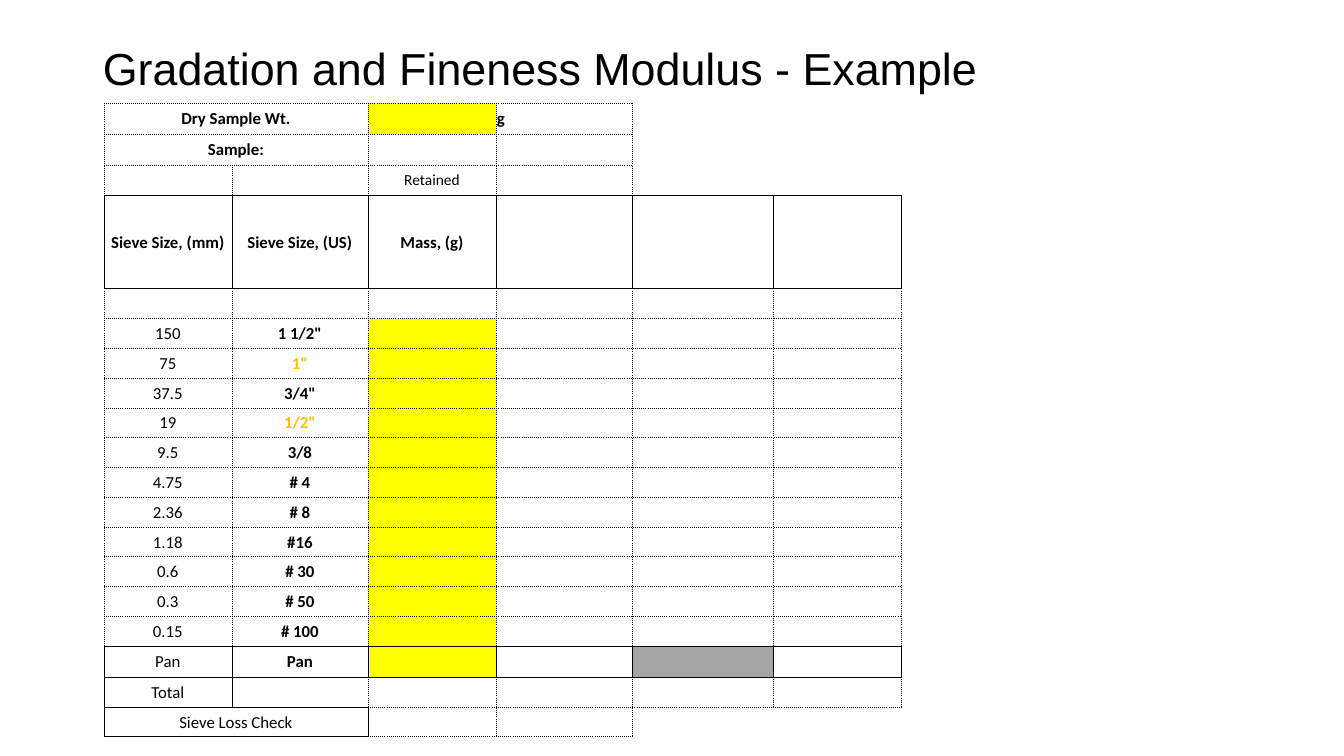
"""Build the gradation and fineness modulus example slide."""
from lxml.etree import SubElement
from pptx import Presentation
from pptx.dml.color import RGBColor
from pptx.enum.text import MSO_ANCHOR, PP_ALIGN
from pptx.oxml.ns import qn
from pptx.util import Inches, Pt

TITLE = "Gradation and Fineness Modulus - Example"
HEAD_ROWS = [
    ["Dry Sample Wt.", "", "", "g"],
    ["Sample:"],
    ["", "", "Retained"],
    ["Sieve Size, (mm)", "Sieve Size, (US)", "Mass, (g)"],
    [],
]
SIEVES = [
    ("150", '1 1/2"'), ("75", '1"'), ("37.5", '3/4"'), ("19", '1/2"'),
    ("9.5", "3/8"), ("4.75", "# 4"), ("2.36", "# 8"), ("1.18", "#16"),
    ("0.6", "# 30"), ("0.3", "# 50"), ("0.15", "# 100"), ("Pan", "Pan"),
]
ROWS = HEAD_ROWS + SIEVES + [["Total"], ["Sieve Loss Check"]]
COL_WIDTHS = [1.27, 1.35, 1.27, 1.35, 1.4, 1.27]
TABLE_HEIGHT = 6.29
SPECIAL_HEIGHTS = {0: 0.31, 1: 0.31, 3: 0.93, 16: 0.31}
RETAINED, HEADER, FIRST_SIEVE, PAN, TOTAL, LOSS = 2, 3, 5, 16, 17, 18
MERGED_ROWS = (0, 1, LOSS)
HALF_SIEVES = ('1"', '1/2"')
BLACK, ORANGE, YELLOW, GRAY = "000000", "FFC000", "FFFF00", "A5A5A5"


def color(hex_string):
    return RGBColor.from_string(hex_string)


def set_font(font, **values):
    font.color.rgb = color(values.pop("color", BLACK))
    for name, value in values.items():
        setattr(font, name, value)


def in_grid(row, col):
    columns = 6 if HEADER <= row <= TOTAL else 4
    return 0 <= row <= LOSS and 0 <= col < columns


def is_boxed(row, col):
    return in_grid(row, col) and (
        row in (HEADER, PAN) or (row, col) in ((TOTAL, 0), (LOSS, 0), (LOSS, 1)))


def draw_borders(cell, row, col):
    joined = row in MERGED_ROWS and col < 2
    neighbors = {
        "L": (row, -1 if joined else col - 1),
        "R": (row, 2 if joined else col + 1),
        "T": (row - 1, col),
        "B": (row + 1, col),
    }
    tc_pr = cell._tc.get_or_add_tcPr()
    for side, other in neighbors.items():
        heavy = {row, other[0]} == {PAN, TOTAL}
        ln = SubElement(tc_pr, qn(f"a:ln{side}"), w=str(Pt(1 if heavy else 0.5)))
        if not (in_grid(row, col) or in_grid(*other)):
            SubElement(ln, qn("a:noFill"))
            continue
        fill = SubElement(ln, qn("a:solidFill"))
        SubElement(fill, qn("a:srgbClr"), val=BLACK)
        solid = is_boxed(row, col) or is_boxed(*other)
        SubElement(ln, qn("a:prstDash"), val="solid" if solid else "sysDot")


def fill_cell(cell, row, col):
    if col == 2 and (row == 0 or FIRST_SIEVE <= row <= PAN):
        shade = YELLOW
    elif (row, col) == (PAN, 4):
        shade = GRAY
    else:
        cell.fill.background()
        return
    cell.fill.solid()
    cell.fill.fore_color.rgb = color(shade)


def write_cell(cell, row, col, text):
    margins = {"margin_left": 0.01, "margin_right": 0.01,
               "margin_top": 0.01, "margin_bottom": 0}
    for name, value in margins.items():
        setattr(cell, name, Inches(value))
    cell.vertical_anchor = MSO_ANCHOR.MIDDLE
    p = cell.text_frame.paragraphs[0]
    if not text:
        SubElement(p._p, qn("a:endParaRPr"), sz="1200")
        return
    p.alignment = PP_ALIGN.LEFT if text == "g" else PP_ALIGN.CENTER
    r = p.add_run()
    r.text = text
    plain = row == RETAINED or (row >= FIRST_SIEVE and col == 0)
    set_font(r.font, name="Calibri", size=Pt(11 if row == RETAINED else 12),
             bold=not plain, color=ORANGE if text in HALF_SIEVES else BLACK)


def add_title(s):
    title = s.shapes.title
    box = {"left": 0.92, "top": 0.38, "width": 11.5, "height": 0.65}
    for name, value in box.items():
        setattr(title, name, Inches(value))
    tf = title.text_frame
    tf.word_wrap = True
    tf.vertical_anchor = MSO_ANCHOR.MIDDLE
    p = tf.paragraphs[0]
    p.alignment = PP_ALIGN.LEFT
    p.line_spacing = 0.9
    r = p.add_run()
    r.text = TITLE
    set_font(r.font, name="Arial", size=Pt(32))


def add_sieve_table(s):
    table = s.shapes.add_table(
        len(ROWS), len(COL_WIDTHS), Inches(1.03), Inches(1.02),
        Inches(sum(COL_WIDTHS)), Inches(TABLE_HEIGHT)).table
    table.first_row = table.horz_banding = False
    for column, width in zip(table.columns, COL_WIDTHS):
        column.width = Inches(width)
    regular = ((TABLE_HEIGHT - sum(SPECIAL_HEIGHTS.values()))
               / (len(ROWS) - len(SPECIAL_HEIGHTS)))
    for row, texts in enumerate(ROWS):
        table.rows[row].height = Inches(SPECIAL_HEIGHTS.get(row, regular))
        if row in MERGED_ROWS:
            table.cell(row, 0).merge(table.cell(row, 1))
        for col in range(len(COL_WIDTHS)):
            cell = table.cell(row, col)
            draw_borders(cell, row, col)
            fill_cell(cell, row, col)
            write_cell(cell, row, col, texts[col] if col < len(texts) else "")


def main():
    prs = Presentation()
    prs.slide_width, prs.slide_height = Inches(13.33), Inches(7.5)
    s = prs.slides.add_slide(prs.slide_layouts[5])
    add_title(s)
    add_sieve_table(s)
    prs.save("out.pptx")


if __name__ == "__main__":
    main()
